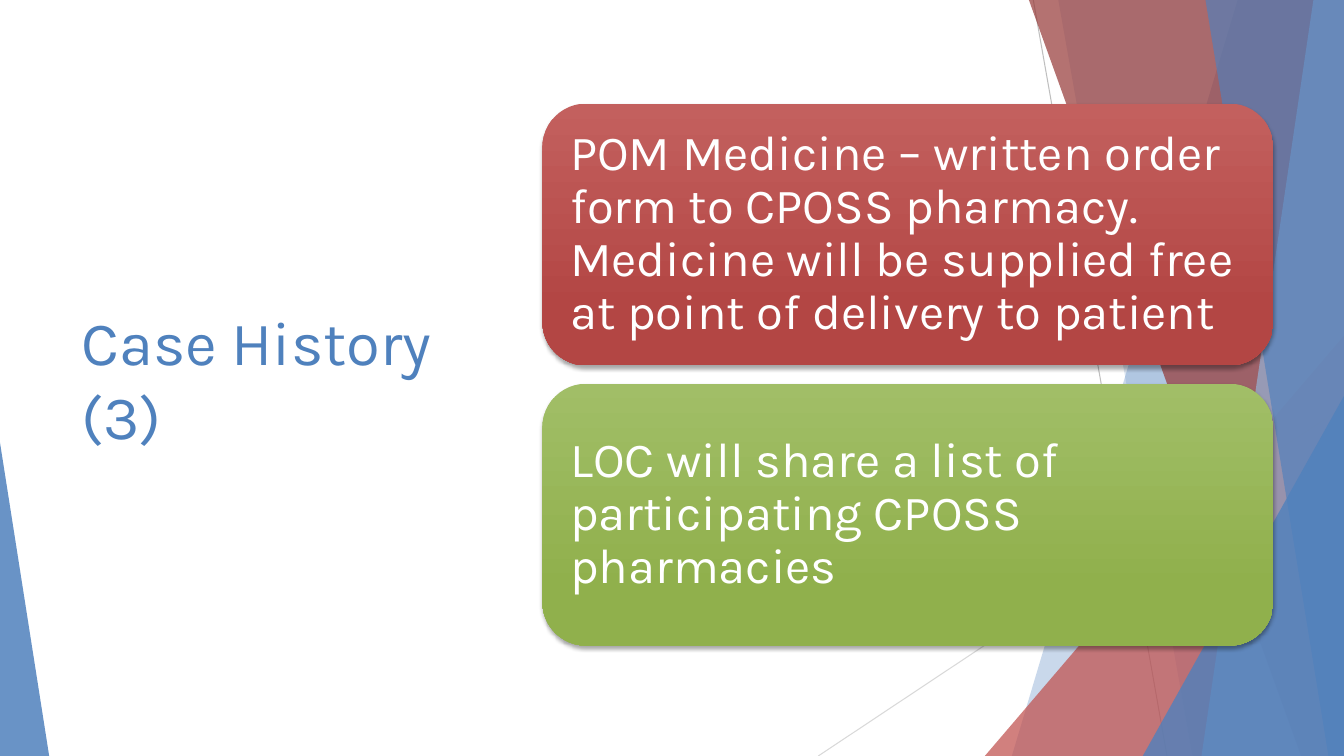
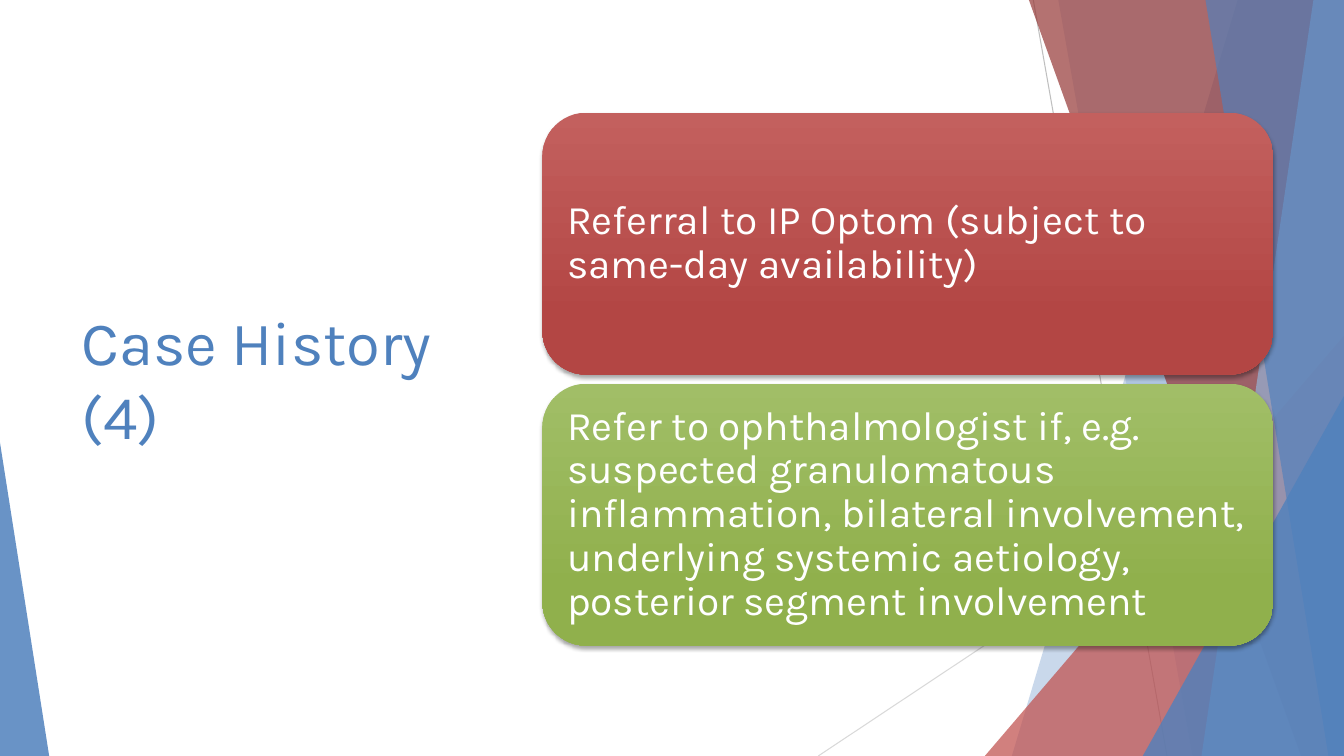
from dataclasses import dataclass
from typing import Any

from lxml.etree import SubElement
from pptx import Presentation
from pptx.dml.color import RGBColor
from pptx.enum.shapes import MSO_CONNECTOR, MSO_SHAPE
from pptx.enum.text import MSO_ANCHOR, MSO_AUTO_SIZE, PP_ALIGN
from pptx.oxml.ns import qn
from pptx.shapes.autoshape import Shape
from pptx.slide import Slide, SlideLayout
from pptx.util import Cm, Pt

SLIDE_WIDTH, SLIDE_HEIGHT = 33.87, 19.05
CARD_LEFT, CARD_WIDTH, CARD_HEIGHT = 13.67, 18.42, 6.6
STACK_BOTTOM = 16.27


@dataclass(frozen=True)
class Theme:
    font: str = "Karla"
    title_size: int = 44
    blue: str = "4F81BD"
    light_blue: str = "95B3D7"
    red: str = "C0504D"
    dark_red: str = "953735"
    grey: str = "BFBFBF"
    light_grey: str = "D9D9D9"
    white: str = "FFFFFF"
    black: str = "000000"
    card_gradients: tuple[tuple[str, str], ...] = (
        ("C3605E", "B34644"),
        ("A1BE67", "90B04C"),
    )
    gradient_end: float = 0.78


THEME = Theme()


@dataclass(frozen=True)
class Ray:
    """A thin line; lengths in cm."""
    start: tuple[float, float]
    end: tuple[float, float]
    color: str


@dataclass(frozen=True)
class Band:
    """A full-height area from a slanted left edge to the right slide edge."""
    top_x: float
    bottom_x: float
    color: str
    opacity: int


@dataclass(frozen=True)
class Corner:
    """A right-angled triangle standing on the bottom slide edge."""
    left: float
    top: float
    width: float
    apex: float
    color: str
    opacity: int


@dataclass(frozen=True)
class CaseSlide:
    title: str
    cards: tuple[str, ...]
    text_size: int
    inset: float
    gap: float


BACKDROP: tuple[Ray | Band | Corner, ...] = (
    Ray((26.04, 0), (29.41, SLIDE_HEIGHT), THEME.grey),
    Ray((SLIDE_WIDTH, 10.24), (20.62, SLIDE_HEIGHT), THEME.light_grey),
    Band(31.19, 25.5, THEME.blue, 30),
    Band(26.67, 30.05, THEME.blue, 20),
    Corner(24.82, 8.46, 9.05, 1, THEME.red, 72),
    Band(25.93, 32.79, THEME.dark_red, 70),
    Band(33.1, 30.28, THEME.light_blue, 70),
    Band(30.38, 33.48, THEME.blue, 65),
    Corner(28.8, 9.98, 5.07, 1, THEME.blue, 80),
    Corner(0, 11.15, 1.24, 0, THEME.blue, 85),
)

CASE_SLIDES = (
    CaseSlide(
        "Case History (3)",
        (
            "POM Medicine – written order form to CPOSS pharmacy. "
            "Medicine will be supplied free at point of delivery to patient",
            "LOC will share a list of participating CPOSS pharmacies",
        ),
        text_size=35, inset=0.38, gap=0.46,
    ),
    CaseSlide(
        "Case History (4)",
        (
            "Referral to IP Optom (subject to same-day availability)",
            "Refer to ophthalmologist if, e.g. suspected granulomatous "
            "inflammation, bilateral involvement, underlying systemic "
            "aetiology, posterior segment involvement",
        ),
        text_size=29, inset=0.3, gap=0.23,
    ),
)


def apply_format(target: Any, values: dict[str, Any]) -> None:
    for name, value in values.items():
        setattr(target, name, value)


def write_text(shape: Shape, text: str, size: int, color: str,
               frame_format: dict[str, Any], line_spacing: float = 1.0) -> None:
    frame = shape.text_frame
    frame.text = text
    apply_format(frame, {
        "word_wrap": True,
        "auto_size": MSO_AUTO_SIZE.NONE,
        "vertical_anchor": MSO_ANCHOR.MIDDLE,
        **frame_format,
    })
    paragraph = frame.paragraphs[0]
    apply_format(paragraph, {"alignment": PP_ALIGN.LEFT, "line_spacing": line_spacing})
    font = paragraph.runs[0].font
    apply_format(font, {"name": THEME.font, "size": Pt(size)})
    font.color.rgb = RGBColor.from_string(color)


def paint_translucent(shape: Shape, color: str, opacity: int) -> None:
    shape.shadow.inherit = False
    shape.line.fill.background()
    shape.fill.solid()
    shape.fill.fore_color.rgb = RGBColor.from_string(color)
    rgb = shape.element.spPr.find(f"{qn('a:solidFill')}/{qn('a:srgbClr')}")
    SubElement(rgb, qn("a:alpha"), val=str(opacity * 1000))


def draw_ray(slide: Slide, ray: Ray) -> None:
    ends = [Cm(length) for length in (*ray.start, *ray.end)]
    connector = slide.shapes.add_connector(MSO_CONNECTOR.STRAIGHT, *ends)
    connector.line.width = Pt(0.75)
    connector.line.color.rgb = RGBColor.from_string(ray.color)
    SubElement(connector.element.spPr, qn("a:effectLst"))


def draw_band(slide: Slide, band: Band) -> None:
    right, bottom = Cm(SLIDE_WIDTH), Cm(SLIDE_HEIGHT)
    builder = slide.shapes.build_freeform(Cm(band.top_x), 0)
    builder.add_line_segments([(right, 0), (right, bottom), (Cm(band.bottom_x), bottom)])
    paint_translucent(builder.convert_to_shape(), band.color, band.opacity)


def draw_corner(slide: Slide, corner: Corner) -> None:
    shape = slide.shapes.add_shape(
        MSO_SHAPE.ISOSCELES_TRIANGLE, Cm(corner.left), Cm(corner.top),
        Cm(corner.width), Cm(SLIDE_HEIGHT - corner.top))
    shape.adjustments[0] = corner.apex
    paint_translucent(shape, corner.color, corner.opacity)


def draw_backdrop(slide: Slide) -> None:
    """Draw on a slide, then move the shapes to its layout for all slides to share."""
    draw = {Ray: draw_ray, Band: draw_band, Corner: draw_corner}
    for item in BACKDROP:
        draw[type(item)](slide, item)
    for shape in list(slide.shapes):
        if not shape.is_placeholder:
            slide.slide_layout.shapes.element.append(shape.element)


def prepare_layout(layout: SlideLayout) -> None:
    """Keep only the title placeholder and place it."""
    for placeholder in list(layout.placeholders):
        if placeholder.placeholder_format.idx:
            placeholder.element.getparent().remove(placeholder.element)
    apply_format(layout.placeholders[0], {
        "left": Cm(1.8), "top": Cm(3.84), "width": Cm(9.86), "height": Cm(11.38),
    })


def add_soft_shadow(shape: Shape) -> None:
    shape.shadow.inherit = False
    effects = shape.element.spPr.find(qn("a:effectLst"))
    shadow = SubElement(effects, qn("a:outerShdw"), blurRad=str(Pt(3)),
                        dist=str(Pt(2)), dir="5400000", rotWithShape="0")
    rgb = SubElement(shadow, qn("a:srgbClr"), val=THEME.black)
    SubElement(rgb, qn("a:alpha"), val="35000")


def draw_card(slide: Slide, text: str, top: float, gradient: tuple[str, str],
              case: CaseSlide) -> None:
    card = slide.shapes.add_shape(
        MSO_SHAPE.ROUNDED_RECTANGLE, Cm(CARD_LEFT), Cm(top),
        Cm(CARD_WIDTH), Cm(CARD_HEIGHT))
    card.line.fill.background()
    card.fill.gradient()
    card.fill.gradient_angle = 270
    positions = (0, THEME.gradient_end)
    for stop, color, position in zip(card.fill.gradient_stops, gradient, positions):
        stop.color.rgb = RGBColor.from_string(color)
        stop.position = position
    add_soft_shadow(card)
    sides = ("left", "top", "right", "bottom")
    margins = {f"margin_{side}": Cm(case.inset) for side in sides}
    write_text(card, text, case.text_size, THEME.white, margins, line_spacing=0.9)


def fill_slide(slide: Slide, case: CaseSlide) -> None:
    write_text(slide.shapes.title, case.title, THEME.title_size, THEME.blue, {})
    pitch = CARD_HEIGHT + case.gap
    first_top = STACK_BOTTOM + case.gap - pitch * len(case.cards)
    for index, (text, gradient) in enumerate(zip(case.cards, THEME.card_gradients)):
        draw_card(slide, text, first_top + index * pitch, gradient, case)


def main() -> None:
    presentation = Presentation()
    apply_format(presentation, {
        "slide_width": Cm(SLIDE_WIDTH), "slide_height": Cm(SLIDE_HEIGHT),
    })
    layout = presentation.slide_layouts.get_by_name("Title Only")
    prepare_layout(layout)
    slides = [presentation.slides.add_slide(layout) for _ in CASE_SLIDES]
    draw_backdrop(slides[0])
    for slide, case in zip(slides, CASE_SLIDES):
        fill_slide(slide, case)
    presentation.save("out.pptx")


if __name__ == "__main__":
    main()
